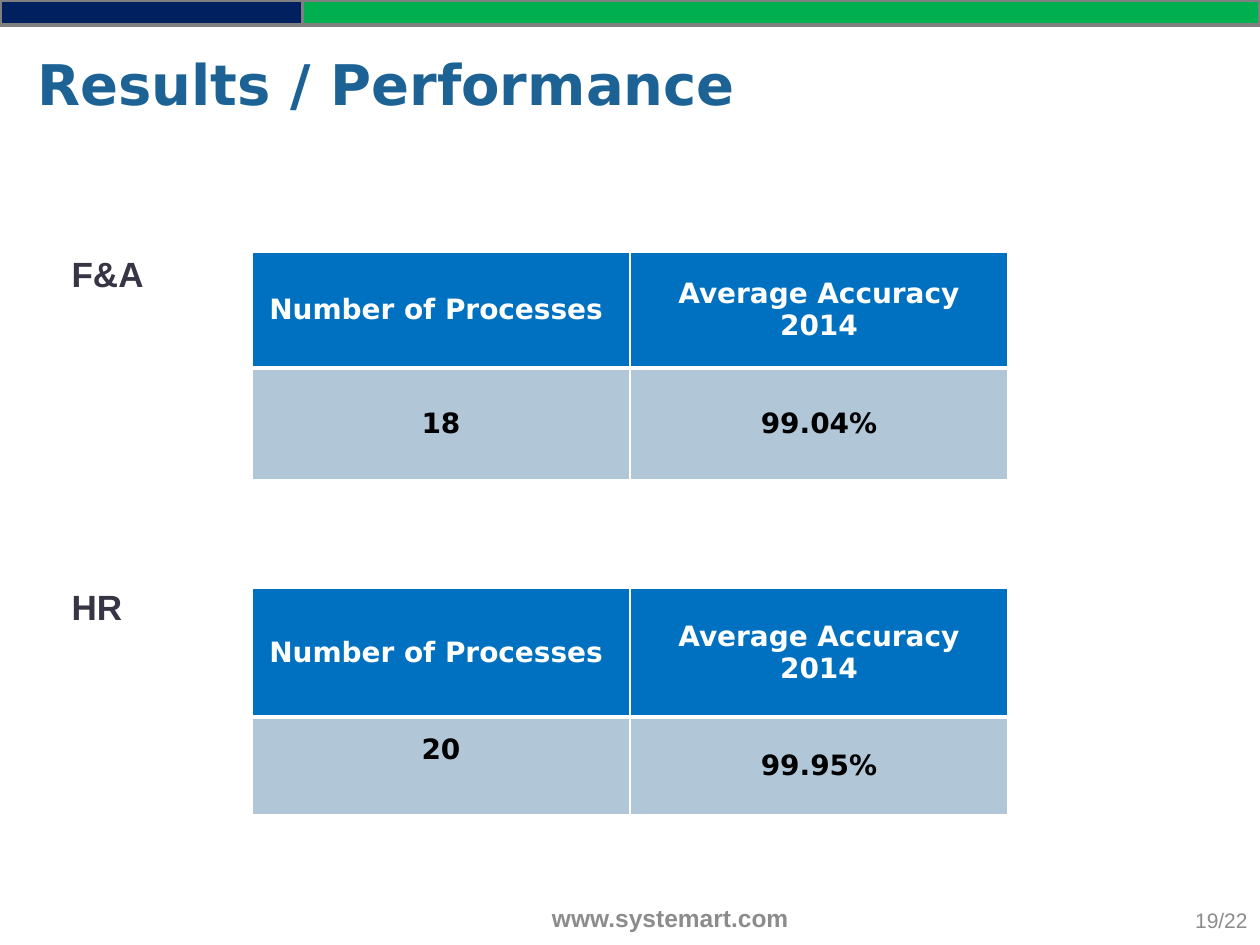
from lxml.etree import SubElement
from pptx import Presentation
from pptx.dml.color import RGBColor
from pptx.enum.shapes import MSO_SHAPE
from pptx.enum.text import MSO_ANCHOR, PP_ALIGN
from pptx.oxml.ns import qn
from pptx.util import Inches, Pt

HEADERS = ["Number of Processes ", "Average Accuracy\n2014"]
HEADING_FONT = "DejaVu Sans"


def rgb(color):
    """Turn a hex string into a colour."""
    return RGBColor.from_string(color)


def write_text(tf, text, size, color, font="Arial", bold=True, align=PP_ALIGN.LEFT):
    """Fill a text frame with one paragraph per line of text."""
    tf.word_wrap = True
    for i, line in enumerate(text.split("\n")):
        p = tf.paragraphs[0] if i == 0 else tf.add_paragraph()
        p.alignment = align
        r = p.add_run()
        r.text = line
        r.font.size = Pt(size)
        r.font.name = font
        r.font.bold = bold
        r.font.color.rgb = rgb(color)


def add_bar(slide, width, color):
    """Draw a bar from the left along the top edge."""
    sp = slide.shapes.add_shape(MSO_SHAPE.RECTANGLE, 0, 0, Inches(width), Inches(0.2))
    sp.shadow.inherit = False
    sp.fill.solid()
    sp.fill.fore_color.rgb = rgb(color)
    sp.line.color.rgb = rgb("808080")
    sp.line.width = Pt(2)


def add_label(slide, left, top, width, height, text, **style):
    """Add a vertically centred text box."""
    sp = slide.shapes.add_textbox(Inches(left), Inches(top), Inches(width), Inches(height))
    sp.text_frame.vertical_anchor = MSO_ANCHOR.MIDDLE
    write_text(sp.text_frame, text, **style)


def set_borders(cell, **widths):
    """Give a cell white borders of the given widths in points."""
    tcPr = cell._tc.get_or_add_tcPr()
    for side in "LRTB":
        ln = SubElement(tcPr, qn(f"a:ln{side}"), w=str(Pt(widths.get(side, 1))))
        SubElement(SubElement(ln, qn("a:solidFill")), qn("a:srgbClr"), val="FFFFFF")


def add_results(slide, top, heights, values):
    """Add a two-column table of processes and accuracy."""
    frame = slide.shapes.add_table(2, 2, Inches(2), Inches(top), Inches(6), Inches(sum(heights)))
    table = frame.table
    rows = [(HEADERS, "0070C0", "FFFFFF", {"B": 3}), (values, "B1C6D7", "000000", {"T": 3})]
    for i, (texts, fill, color, borders) in enumerate(rows):
        table.rows[i].height = Inches(heights[i])
        for j, text in enumerate(texts):
            cell = table.cell(i, j)
            set_borders(cell, **borders)
            cell.fill.solid()
            cell.fill.fore_color.rgb = rgb(fill)
            cell.vertical_anchor = MSO_ANCHOR.MIDDLE
            write_text(cell.text_frame, text, size=16, color=color,
                       font=HEADING_FONT, align=PP_ALIGN.CENTER)
    return table


def main():
    """Build the results slide."""
    prs = Presentation()
    prs.slide_width, prs.slide_height = Inches(10), Inches(7.5)
    slide = prs.slides.add_slide(prs.slide_layouts[6])

    add_bar(slide, 10, "00B050")
    add_bar(slide, 2.4, "002060")
    add_label(slide, 0.2, 0.27, 9.17, 0.78, "Results / Performance",
              size=32, color="1D6294", font=HEADING_FONT)

    add_label(slide, 0.47, 1.97, 1.4, 0.4, "F&A", size=20, color="373545")
    add_results(slide, 2, [0.92, 0.89], ["18", "99.04%"])
    add_label(slide, 0.47, 4.61, 1.4, 0.4, "HR", size=20, color="373545")
    hr_table = add_results(slide, 4.67, [1.02, 0.78], ["20", "99.95%"])
    hr_table.cell(1, 0).margin_bottom = Inches(0.3)

    add_label(slide, 3.51, 7.08, 3.62, 0.4, "www.systemart.com",
              size=14, color="8C8C8C", align=PP_ALIGN.CENTER)
    add_label(slide, 6.25, 7.1, 3.75, 0.4, "19/22",
              size=12, color="8C8C8C", bold=False, align=PP_ALIGN.RIGHT)
    prs.save("out.pptx")


if __name__ == "__main__":
    main()
